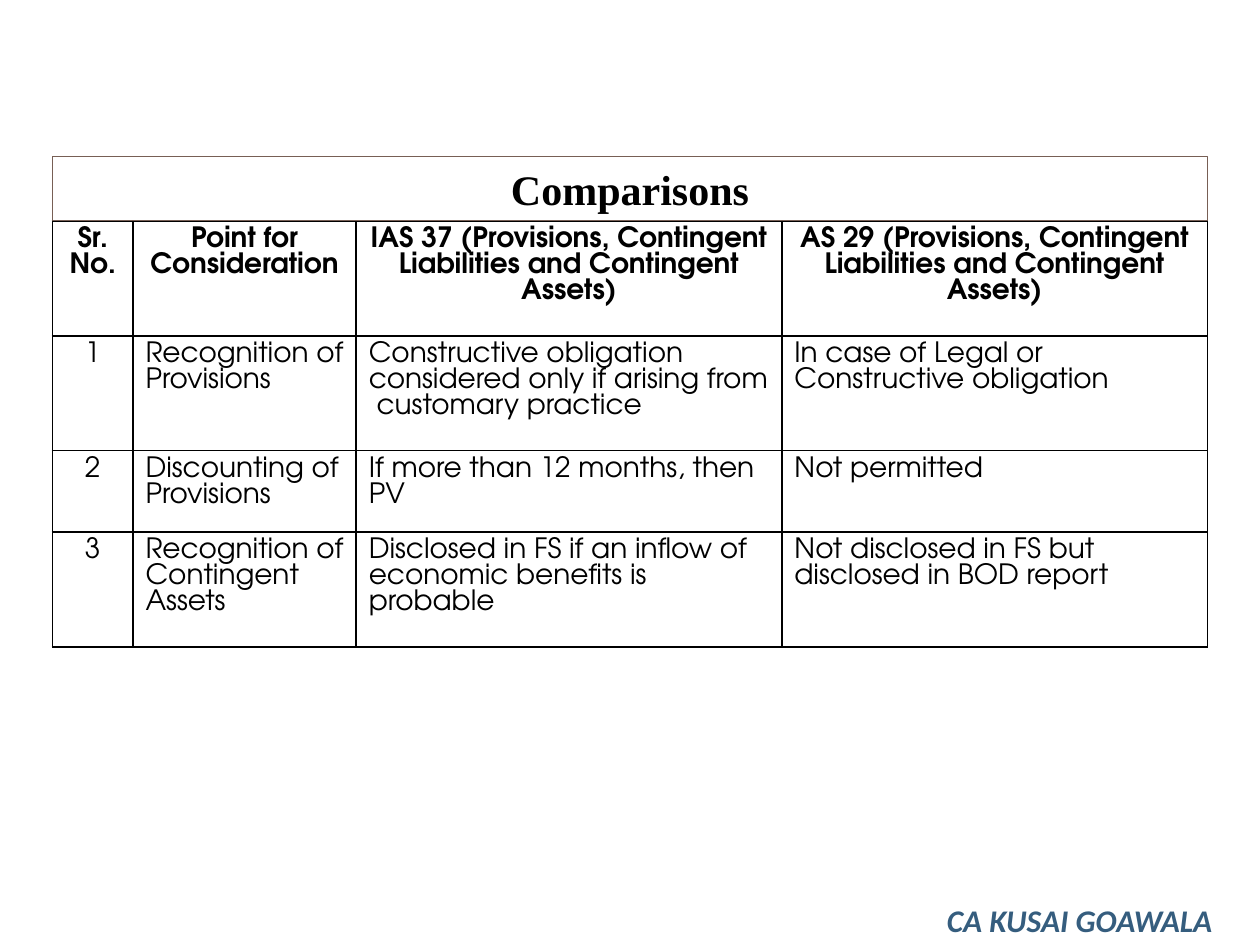
from lxml import etree
from pptx import Presentation
from pptx import util as u
from pptx.dml.color import RGBColor
from pptx.enum import shapes, text
from pptx.oxml.ns import qn

Pt = u.Pt
BLACK = "000000"
BODY = dict(name="TeX Gyre Adventor", size=Pt(16), bold=False)
HEAD = dict(BODY, bold=True)
TITLE = dict(name="Times New Roman", size=Pt(24), bold=True)
SIGNATURE = dict(name="Calibri", size=Pt(18), bold=True, italic=True)
COLS = [46, 127.6, 243.2, 243.2]
HEIGHTS = [65.7, 65.7, 46.4, 65.7]
ROWS = [
    ["Sr. No.", "Point for Consideration",
     "IAS 37 (Provisions, Contingent Liabilities and Contingent Assets)",
     "AS 29 (Provisions, Contingent Liabilities and Contingent Assets)"],
    ["1", "Recognition of Provisions",
     "Constructive obligation considered only if arising from  customary practice",
     "In case of Legal or Constructive obligation"],
    ["2", "Discounting of Provisions",
     "If more than 12 months, then PV", "Not permitted"],
    ["3", "Recognition of Contingent Assets",
     "Disclosed in FS if an inflow of economic benefits is probable",
     "Not disclosed in FS but disclosed in BOD report"],
]


def rgb(value):
    """Return the colour for a hex string."""
    return RGBColor.from_string(value)


def write(tf, words, style, color=BLACK, align=text.PP_ALIGN.LEFT):
    """Fill a text frame with one formatted paragraph and return it."""
    tf.word_wrap = True
    p = tf.paragraphs[0]
    p.alignment = align
    r = p.add_run()
    r.text = words
    for key, value in style.items():
        setattr(r.font, key, value)
    r.font.color.rgb = rgb(color)
    return p


def add_borders(cell, color, width):
    """Draw a solid line on all four sides of a cell."""
    pr = cell._tc.get_or_add_tcPr()
    for i, side in enumerate(("lnL", "lnR", "lnT", "lnB")):
        ln = etree.Element(qn(f"a:{side}"), w=str(Pt(width)))
        fill = etree.SubElement(ln, qn("a:solidFill"))
        etree.SubElement(fill, qn("a:srgbClr"), val=color)
        pr.insert(i, ln)


def add_comparison(s, x, y, w, h):
    """Place the comparison table in the given box."""
    table = s.shapes.add_table(len(ROWS), len(COLS), Pt(x), Pt(y), Pt(w), Pt(h)).table
    for col, width in zip(table.columns, COLS):
        col.width = Pt(width)
    for i, (row, height) in enumerate(zip(ROWS, HEIGHTS)):
        table.rows[i].height = Pt(height)
        for j, words in enumerate(row):
            cell = table.cell(i, j)
            cell.fill.background()
            centred = i == 0 or j == 0
            p = write(cell.text_frame, words, BODY if i else HEAD,
                      align=text.PP_ALIGN.CENTER if centred else text.PP_ALIGN.LEFT)
            p.line_spacing = Pt(14.86)
            add_borders(cell, BLACK, 1)


def add_title(s, x, y, w, h):
    """Place the outlined title bar in the given box."""
    sp = s.shapes.add_shape(shapes.MSO_SHAPE.RECTANGLE, Pt(x), Pt(y), Pt(w), Pt(h))
    sp.shadow.inherit = False
    sp.fill.background()
    sp.line.color.rgb = rgb("775F55")
    sp.line.width = Pt(0.75)
    sp.text_frame.vertical_anchor = text.MSO_ANCHOR.MIDDLE
    write(sp.text_frame, "Comparisons", TITLE, align=text.PP_ALIGN.CENTER)


def add_signature(s, x, y, w, h):
    """Place the author's name in the given box."""
    tf = s.shapes.add_textbox(Pt(x), Pt(y), Pt(w), Pt(h)).text_frame
    write(tf, "CA KUSAI GOAWALA", SIGNATURE, "355D7E")


def main():
    """Build and save the slide."""
    prs = Presentation()
    prs.slide_width, prs.slide_height = Pt(720), Pt(540)
    s = prs.slides.add_slide(prs.slide_layouts[6])
    x, y, w = 30, 126.2, sum(COLS)
    title_h = 36.8
    add_comparison(s, x, y, w, sum(HEIGHTS))
    add_title(s, x, y - title_h, w, title_h)
    add_signature(s, 534, 511.2, 186, 28.8)
    prs.save("out.pptx")


if __name__ == "__main__":
    main()
